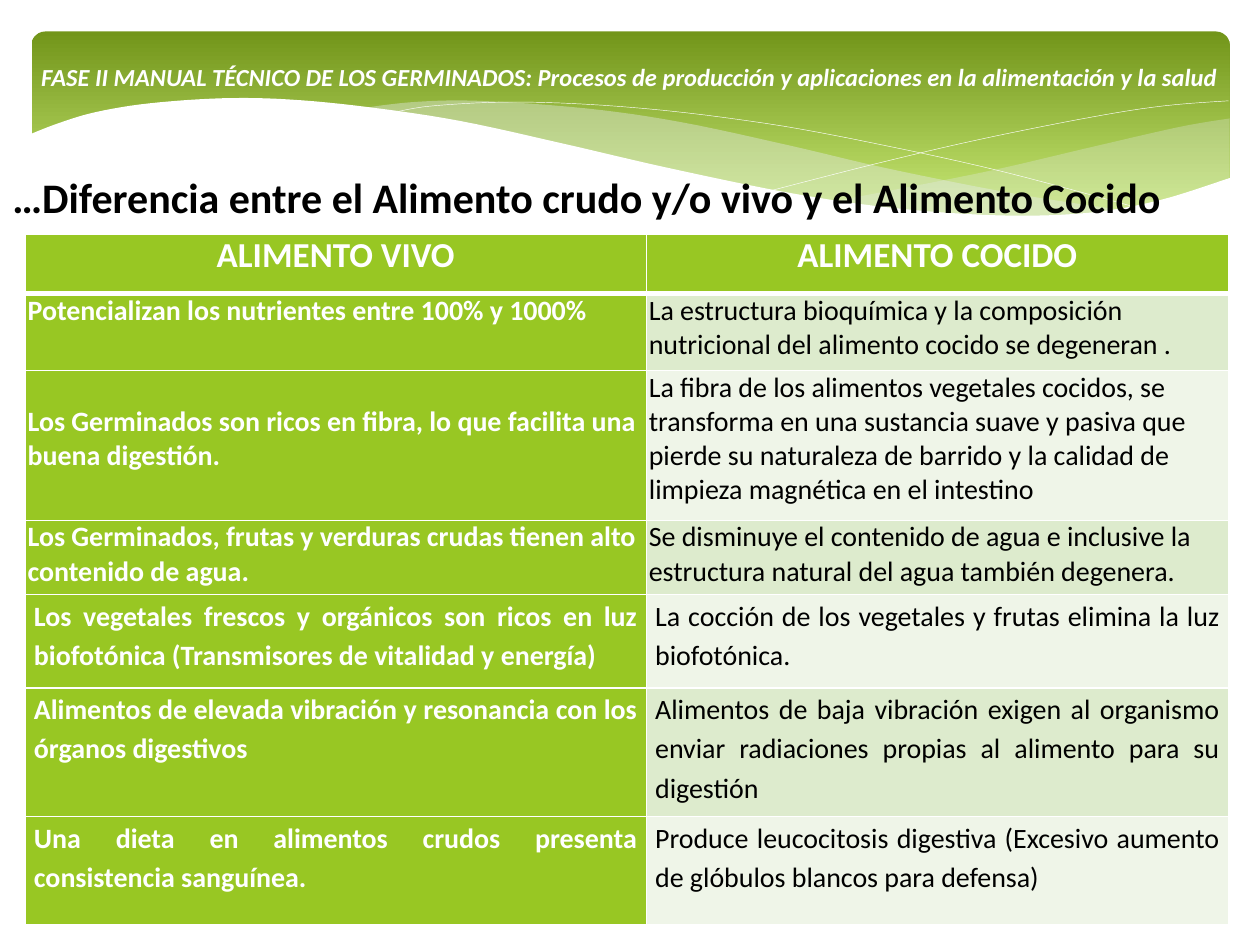
"""Build the slide comparing living food with cooked food."""
from dataclasses import dataclass
from lxml.etree import SubElement
from pptx import Presentation
from pptx.dml.color import RGBColor
from pptx.enum.shapes import MSO_SHAPE
from pptx.enum.text import MSO_ANCHOR, PP_ALIGN
from pptx.oxml.ns import qn
from pptx.util import Inches, Pt


@dataclass(frozen=True)
class Theme:
    font: str = "Calibri"
    white: RGBColor = RGBColor.from_string("FFFFFF")
    black: RGBColor = RGBColor.from_string("000000")
    green: RGBColor = RGBColor.from_string("98C723")
    dark_green: RGBColor = RGBColor.from_string("72951A")
    light_green: RGBColor = RGBColor.from_string("C5E672")
    mist: RGBColor = RGBColor.from_string("E7ECED")
    bands: tuple = (RGBColor.from_string("DDEBCD"), RGBColor.from_string("EFF5E8"))
    title_size: Pt = Pt(14)
    heading_size: Pt = Pt(24)
    header_size: Pt = Pt(20)
    body_size: Pt = Pt(16)


def smooth(knots, steps=6):
    points = [knots[0]]
    padded = [knots[0], *knots, knots[-1]]
    for a, b, c, d in zip(padded, padded[1:], padded[2:], padded[3:]):
        for step in range(1, steps + 1):
            t = step / steps
            points.append(tuple(
                0.5 * (2 * q + (r - p) * t + (2 * p - 5 * q + 4 * r - s) * t**2
                       + (3 * q - p - 3 * r + s) * t**3)
                for p, q, r, s in zip(a, b, c, d)))
    return points


def style(paragraph, size, color, bold, align):
    paragraph.alignment = align
    paragraph.font.name = theme.font
    paragraph.font.size = size
    paragraph.font.bold = bold
    paragraph.font.color.rgb = color


theme = Theme()
deck = Presentation()
deck.slide_width, deck.slide_height = Inches(10), Inches(7.5)
page = deck.slides.add_slide(deck.slide_layouts[5])

banner = page.shapes.add_shape(
    MSO_SHAPE.ROUNDED_RECTANGLE, Inches(0.25), Inches(0.25), Inches(9.51), Inches(1.56))
banner.adjustments[0] = 0.07
banner.shadow.inherit = False
banner.line.fill.background()
banner.fill.gradient()
banner.fill.gradient_angle = 270
for stop, color, position in zip(
        banner.fill.gradient_stops, (theme.dark_green, theme.light_green), (0, 0.9)):
    stop.color.rgb = color
    stop.position = position

right_wave = (
    smooth([(9.76, 0.94), (9.35, 1.01), (8.61, 1.18), (7.79, 1.37), (6.61, 1.6)])
    + smooth([(6.61, 1.6), (7.32, 1.68), (8.03, 1.72), (8.72, 1.69), (9.35, 1.56), (9.76, 1.41)]))
middle_wave = (
    smooth([(8.93, 1.67), (8.07, 1.54), (7.06, 1.34), (6.29, 1.16), (5.41, 0.97),
            (4.65, 0.86), (3.8, 0.8), (3.28, 0.81), (2.86, 0.86)])
    + smooth([(2.86, 0.86), (3.62, 0.97), (4.49, 1.16), (5.66, 1.43), (6.5, 1.58),
              (7.36, 1.69), (8.18, 1.73), (8.93, 1.67)]))
falling_line = smooth([(3.09, 0.9), (3.44, 0.84), (4.16, 0.81), (5.1, 0.86),
                       (6.08, 0.98), (6.95, 1.14), (7.95, 1.36), (9.07, 1.66)])
rising_line = smooth([(6.13, 1.51), (6.95, 1.3), (7.76, 1.11), (8.66, 0.93),
                      (9.24, 0.84), (9.75, 0.8)])
front_wave = smooth(
    [(9.77, 1.41), (9.2, 1.59), (8.63, 1.69), (7.93, 1.71), (7.08, 1.65), (6.26, 1.53),
     (5.29, 1.33), (4.47, 1.14), (3.65, 0.96), (2.92, 0.85), (2.3, 0.79), (1.77, 0.78),
     (1.19, 0.82), (0.76, 0.89), (0.46, 0.98), (0.23, 1.07)]) + [(0.23, 2.24), (9.77, 2.24)]

for points, color, opacity in (
        (right_wave, theme.mist, 29), (middle_wave, theme.mist, 40),
        (falling_line, None, None), (rising_line, None, None),
        (front_wave, theme.white, 100)):
    corners = [(Inches(x), Inches(y)) for x, y in points]
    outline = page.shapes.build_freeform(*corners[0])
    outline.add_line_segments(corners[1:], close=color is not None)
    wave = outline.convert_to_shape()
    wave.shadow.inherit = False
    if color is None:
        wave.fill.background()
        wave.line.color.rgb = theme.white
        wave.line.width = Pt(0.25)
        continue
    wave.line.fill.background()
    wave.fill.solid()
    wave.fill.fore_color.rgb = color
    if opacity < 100:
        paint = wave.element.spPr.find(qn("a:solidFill"))[0]
        SubElement(paint, qn("a:alpha"), val=str(opacity * 1000))

title = page.shapes.title
wave.element.addnext(title.element)
title.left, title.top, title.width, title.height = (
    Inches(0), Inches(0.29), Inches(10), Inches(0.63))
title.text_frame.text = (
    "FASE II MANUAL TÉCNICO DE LOS GERMINADOS: Procesos de producción y aplicaciones "
    "en la alimentación y la salud")
title.text_frame.vertical_anchor = MSO_ANCHOR.MIDDLE
title.text_frame.margin_left = title.text_frame.margin_right = Inches(0.1)
style(title.text_frame.paragraphs[0], theme.title_size, theme.white, True, PP_ALIGN.CENTER)
title.text_frame.paragraphs[0].font.italic = True

heading = page.shapes.add_textbox(Inches(0), Inches(1.07), Inches(9.8), Inches(0.74))
heading.text_frame.word_wrap = True
heading.text_frame.vertical_anchor = MSO_ANCHOR.BOTTOM
heading.text_frame.text = "…Diferencia entre el Alimento crudo y/o vivo y el Alimento Cocido"
style(heading.text_frame.paragraphs[0], theme.heading_size, theme.black, True, PP_ALIGN.JUSTIFY)

rows = [
    (0.47, "ALIMENTO VIVO", "ALIMENTO COCIDO"),
    (0.61, "Potencializan los nutrientes entre 100% y 1000%",
     "La estructura bioquímica y la composición nutricional del alimento cocido se degeneran ."),
    (1.19, "Los Germinados son ricos en fibra, lo que facilita una buena digestión.",
     "La fibra de los alimentos vegetales cocidos, se transforma en una sustancia suave y pasiva "
     "que pierde su naturaleza de barrido y la calidad de limpieza magnética en el intestino"),
    (0.59, "Los Germinados, frutas y verduras crudas tienen alto contenido de agua.",
     "Se disminuye el contenido de agua e inclusive la estructura natural del agua también degenera."),
    (0.74, "Los vegetales frescos y orgánicos son ricos en luz biofotónica "
     "(Transmisores de vitalidad y energía)",
     "La cocción de los vegetales y frutas elimina la luz biofotónica."),
    (1.02, "Alimentos de elevada vibración y resonancia con los órganos digestivos",
     "Alimentos de baja vibración exigen al organismo enviar radiaciones propias al alimento "
     "para su digestión"),
    (0.86, "Una dieta en alimentos crudos presenta consistencia sanguínea.",
     "Produce leucocitosis digestiva (Excesivo aumento de glóbulos blancos para defensa)"),
]
table = page.shapes.add_table(
    len(rows), 2, Inches(0.2), Inches(1.86), Inches(9.55), Inches(5.48)).table
for column, width in zip(table.columns, (4.93, 4.62)):
    column.width = Inches(width)

for row_index, (height, *texts) in enumerate(rows):
    table.rows[row_index].height = Inches(height)
    is_header, is_justified = row_index == 0, row_index >= 4
    for column_index, text in enumerate(texts):
        cell = table.cell(row_index, column_index)
        is_green = is_header or column_index == 0
        cell.text = text
        cell.margin_left = cell.margin_right = Inches(0.07 if is_justified else 0.02)
        cell.margin_top = cell.margin_bottom = Inches(0)
        paragraph = cell.text_frame.paragraphs[0]
        align = (PP_ALIGN.CENTER if is_header
                 else PP_ALIGN.JUSTIFY if is_justified else PP_ALIGN.LEFT)
        style(paragraph, theme.header_size if is_header else theme.body_size,
              theme.white if is_green else theme.black, is_green, align)
        if is_justified:
            paragraph.line_spacing = 1.15
        for side in "LRTB":
            is_thick = (row_index, side) in ((0, "B"), (1, "T"))
            border = SubElement(cell._tc.get_or_add_tcPr(), qn(f"a:ln{side}"),
                                w=str(Pt(3 if is_thick else 1)))
            SubElement(SubElement(border, qn("a:solidFill")), qn("a:srgbClr"),
                       val=str(theme.white))
        cell.fill.solid()
        cell.fill.fore_color.rgb = theme.green if is_green else theme.bands[(row_index - 1) % 2]
table.cell(2, 0).margin_top = Inches(0.27)

deck.save("out.pptx")
